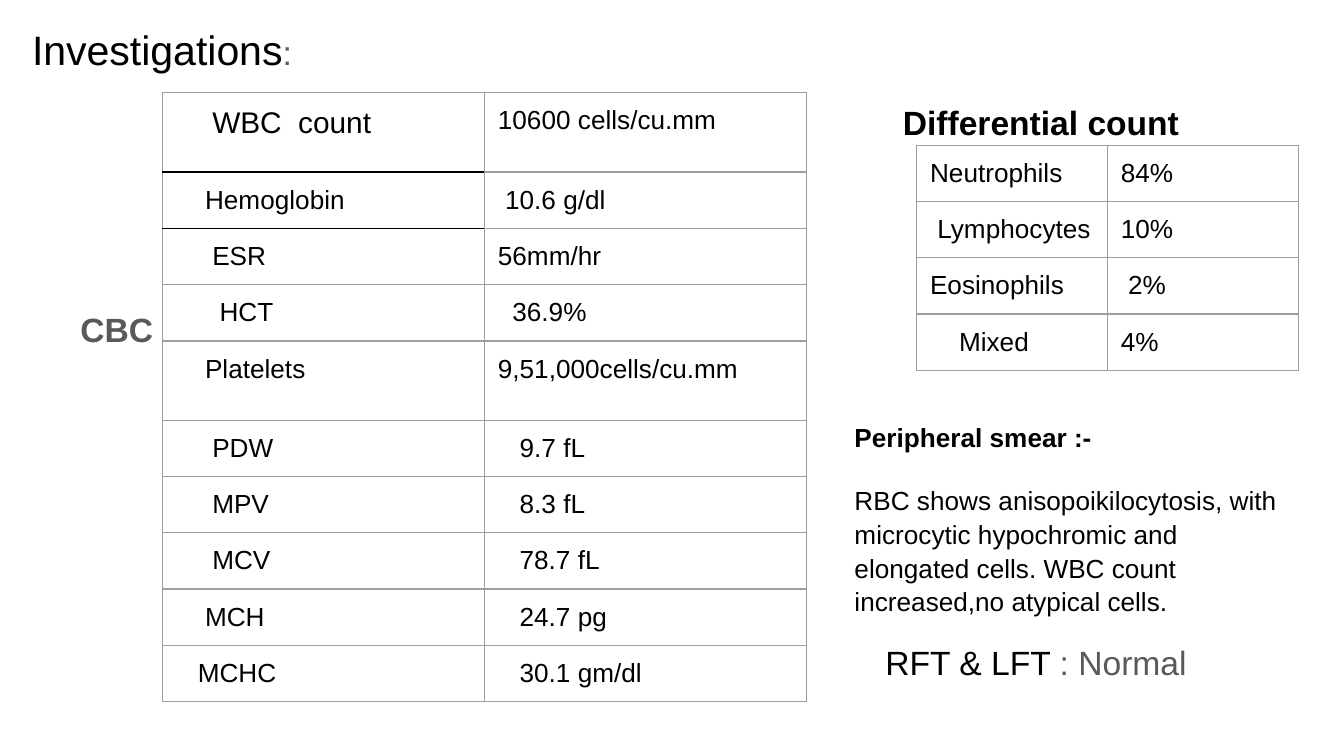
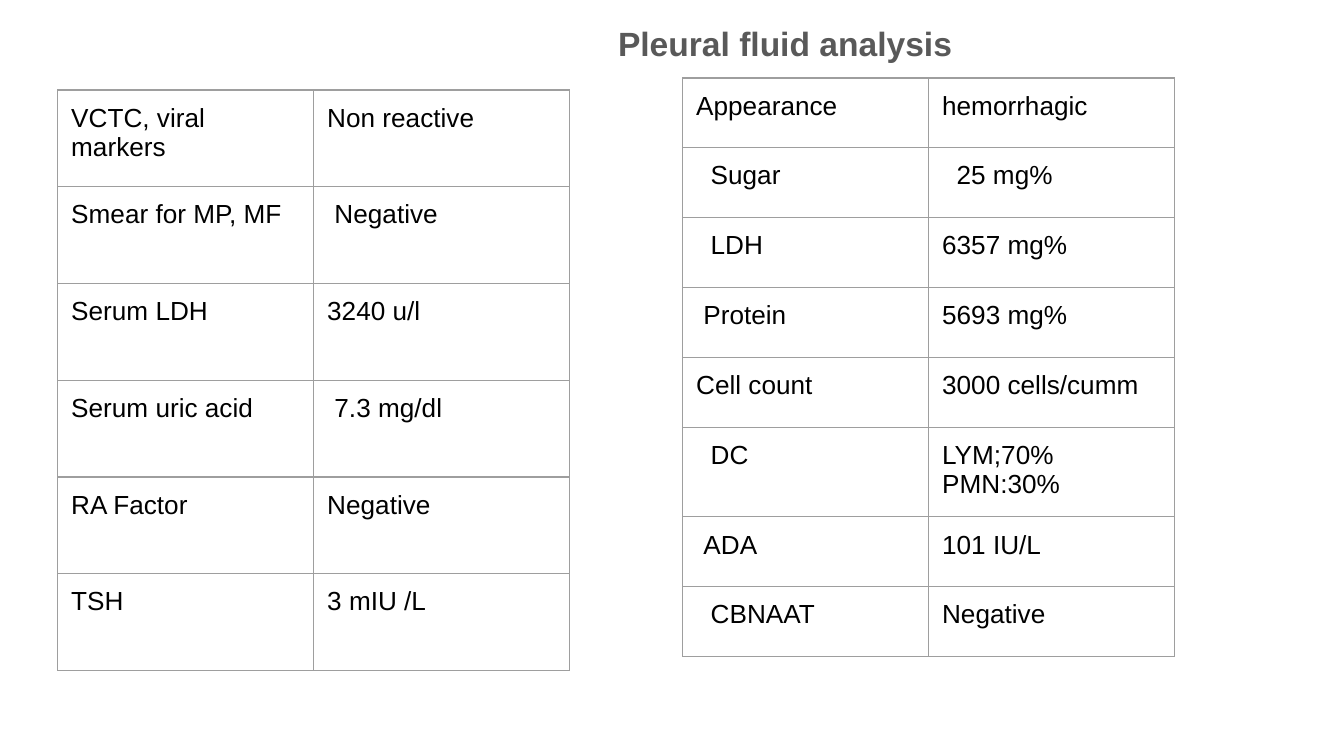
from dataclasses import dataclass

from lxml import etree
from pptx import Presentation
from pptx.dml.color import RGBColor
from pptx.enum.text import MSO_ANCHOR
from pptx.oxml.ns import qn
from pptx.slide import Slide
from pptx.table import _Cell
from pptx.text.text import TextFrame
from pptx.util import Inches, Pt

BLACK = RGBColor(0x00, 0x00, 0x00)
GRAY = RGBColor(0x59, 0x59, 0x59)
BORDER_GRAY = RGBColor(0x9E, 0x9E, 0x9E)
TOP = MSO_ANCHOR.TOP
FONT = "Arial"
CELL_SIZE = 14
HEADING_SIZE = 18
INSET = 0.1
INDENT_STEP = 0.054


@dataclass(frozen=True)
class Run:
    text: str
    size: float = CELL_SIZE
    color: RGBColor = BLACK
    bold: bool = False


@dataclass(frozen=True)
class Entry:
    name: str
    value: str
    name_indent: int = 0
    value_indent: int = 0
    name_size: float = CELL_SIZE
    height: float | None = None


@dataclass(frozen=True)
class ResultTable:
    left: float
    top: float
    column_width: float
    row_height: float
    entries: tuple[Entry, ...]
    black_rules_after: tuple[int, ...] = ()


@dataclass(frozen=True)
class TextBox:
    left: float
    top: float
    width: float
    height: float
    paragraphs: tuple[tuple[Run, ...], ...]
    vertical_inset: float = INSET
    line_spacing: float = 1.0
    gap: float = 0


BLOOD_COUNT = ResultTable(1.21, 0.69, 2.395, 0.4, (
    Entry("WBC  count", "10600 cells/cu.mm", 5, name_size=16, height=0.59),
    Entry("Hemoglobin", "10.6 g/dl", 4, 1),
    Entry("ESR", "56mm/hr", 5),
    Entry("HCT", "36.9%", 6, 2),
    Entry("Platelets", "9,51,000cells/cu.mm", 4, height=0.59),
    Entry("PDW", "9.7 fL", 5, 3),
    Entry("MPV", "8.3 fL", 5, 3),
    Entry("MCV", "78.7 fL", 5, 3),
    Entry("MCH", "24.7 pg", 4, 3),
    Entry("MCHC", "30.1 gm/dl", 3, 3),
), black_rules_after=(0, 1))

DIFFERENTIAL_COUNT = ResultTable(6.82, 1.08, 1.42, 0.41, (
    Entry("Neutrophils", "84%"),
    Entry("Lymphocytes", "10%", 1),
    Entry("Eosinophils", "2%", 0, 1),
    Entry("Mixed", "4%", 4),
))

SEROLOGY = ResultTable(0.43, 0.67, 1.905, 0.72, (
    Entry("VCTC, viral markers", "Non reactive"),
    Entry("Smear for MP, MF", "Negative", 0, 1),
    Entry("Serum LDH", "3240 u/l"),
    Entry("Serum uric acid", "7.3 mg/dl", 0, 1),
    Entry("RA Factor", "Negative"),
    Entry("TSH", "3 mIU /L"),
))

PLEURAL_FLUID = ResultTable(5.08, 0.58, 1.83, 0.52, (
    Entry("Appearance", "hemorrhagic"),
    Entry("Sugar", "25 mg%", 2, 2),
    Entry("LDH", "6357 mg%", 2),
    Entry("Protein", "5693 mg%", 1),
    Entry("Cell count", "3000 cells/cumm"),
    Entry("DC", "LYM;70%\nPMN:30%", 2),
    Entry("ADA", "101 IU/L", 1),
    Entry("CBNAAT", "Negative", 2),
))

INVESTIGATION_TEXTS = (
    TextBox(0.14, 0.08, 3, 0.55, (
        (Run("Investigations", 22), Run(":", HEADING_SIZE, GRAY)),
    )),
    TextBox(6.62, 0.66, 2.5, 0.5, (
        (Run("Differential count", HEADING_SIZE, bold=True),),
    )),
    TextBox(0.5, 2.2, 0.78, 0.5, ((Run("CBC", HEADING_SIZE, GRAY, True),),)),
    TextBox(6.49, 4.68, 2.94, 0.51, (
        (Run("RFT & LFT ", HEADING_SIZE), Run(": Normal", HEADING_SIZE, GRAY)),
    )),
    TextBox(6.26, 3.07, 3.4, 1.75, (
        (Run("Peripheral smear :-", bold=True),),
        (Run("RBC shows anisopoikilocytosis, with microcytic hypochromic and "
             "elongated cells. WBC count increased,no atypical cells."),),
    ), vertical_inset=0.05, line_spacing=1.07, gap=16),
)

PLEURAL_TEXTS = (
    TextBox(4.5, 0.07, 4.49, 0.51, (
        (Run("Pleural fluid analysis", HEADING_SIZE, GRAY, True),),
    )),
)


def write_text(frame: TextFrame, paragraphs: tuple[tuple[Run, ...], ...], *,
               line_spacing: float = 1.0, gap: float = 0) -> None:
    for index, runs in enumerate(paragraphs):
        paragraph = frame.add_paragraph() if index else frame.paragraphs[0]
        paragraph.line_spacing = line_spacing
        paragraph.space_before = Pt(gap if index else 0)
        for item in runs:
            run = paragraph.add_run()
            run.text = item.text
            run.font.name = FONT
            run.font.size = Pt(item.size)
            run.font.bold = item.bold
            run.font.color.rgb = item.color


def draw_text_box(slide: Slide, box: TextBox) -> None:
    shape = slide.shapes.add_textbox(
        Inches(box.left), Inches(box.top), Inches(box.width), Inches(box.height))
    frame = shape.text_frame
    frame.word_wrap = True
    frame.vertical_anchor = TOP
    frame.margin_left = frame.margin_right = Inches(INSET)
    frame.margin_top = frame.margin_bottom = Inches(box.vertical_inset)
    write_text(frame, box.paragraphs, line_spacing=box.line_spacing, gap=box.gap)


def set_border(cell: _Cell, side: str, color: RGBColor, width: float) -> None:
    properties = cell._tc.get_or_add_tcPr()
    line = etree.SubElement(properties, qn(f"a:ln{side}"), w=str(Pt(width)))
    fill = etree.SubElement(line, qn("a:solidFill"))
    etree.SubElement(fill, qn("a:srgbClr"), val=str(color))


def fill_cell(cell: _Cell, text: str, *, indent: int, size: float,
              black_sides: str) -> None:
    cell.vertical_anchor = TOP
    cell.margin_left = Inches(INSET + indent * INDENT_STEP)
    cell.margin_right = cell.margin_top = cell.margin_bottom = Inches(INSET)
    for side in "LRTB":
        black = side in black_sides
        set_border(cell, side, BLACK if black else BORDER_GRAY, 1 if black else 0.75)
    cell.fill.background()
    write_text(cell.text_frame, tuple((Run(line, size),) for line in text.split("\n")))


def draw_table(slide: Slide, results: ResultTable) -> None:
    heights = [entry.height or results.row_height for entry in results.entries]
    table = slide.shapes.add_table(
        len(heights), 2, Inches(results.left), Inches(results.top),
        Inches(2 * results.column_width), Inches(sum(heights))).table
    table.first_row = False
    table.horz_banding = False
    for column in table.columns:
        column.width = Inches(results.column_width)
    for index, (entry, height) in enumerate(zip(results.entries, heights)):
        table.rows[index].height = Inches(height)
        black_sides = ("T" if index - 1 in results.black_rules_after else "") + (
            "B" if index in results.black_rules_after else "")
        fill_cell(table.cell(index, 0), entry.name, indent=entry.name_indent,
                  size=entry.name_size, black_sides=black_sides)
        fill_cell(table.cell(index, 1), entry.value, indent=entry.value_indent,
                  size=CELL_SIZE, black_sides="")


def main() -> None:
    presentation = Presentation()
    presentation.slide_width = Inches(10)
    presentation.slide_height = Inches(5.625)
    for tables, texts in (
        ((BLOOD_COUNT, DIFFERENTIAL_COUNT), INVESTIGATION_TEXTS),
        ((SEROLOGY, PLEURAL_FLUID), PLEURAL_TEXTS),
    ):
        slide = presentation.slides.add_slide(presentation.slide_layouts[6])
        for results in tables:
            draw_table(slide, results)
        for box in texts:
            draw_text_box(slide, box)
    presentation.save("out.pptx")


if __name__ == "__main__":
    main()
